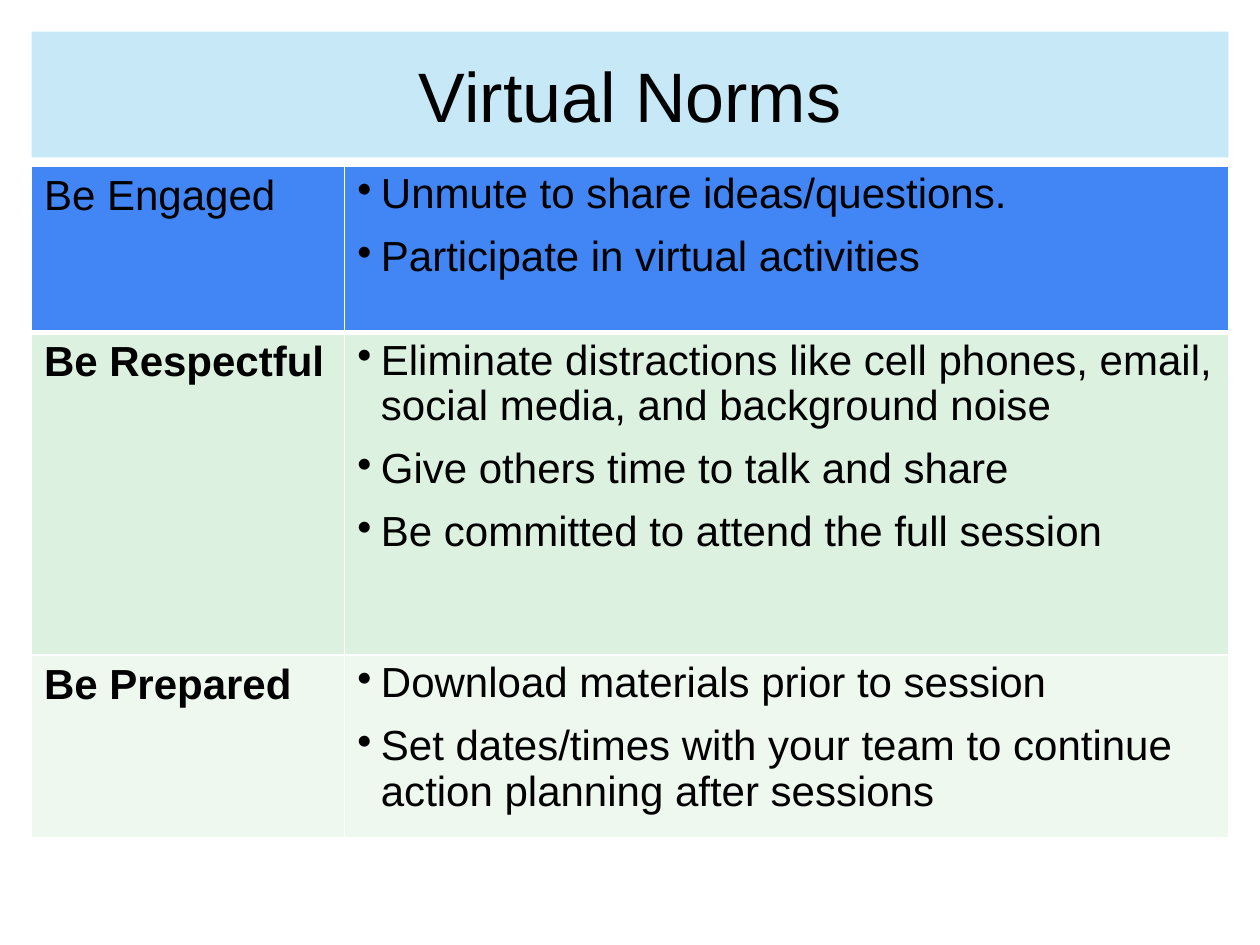
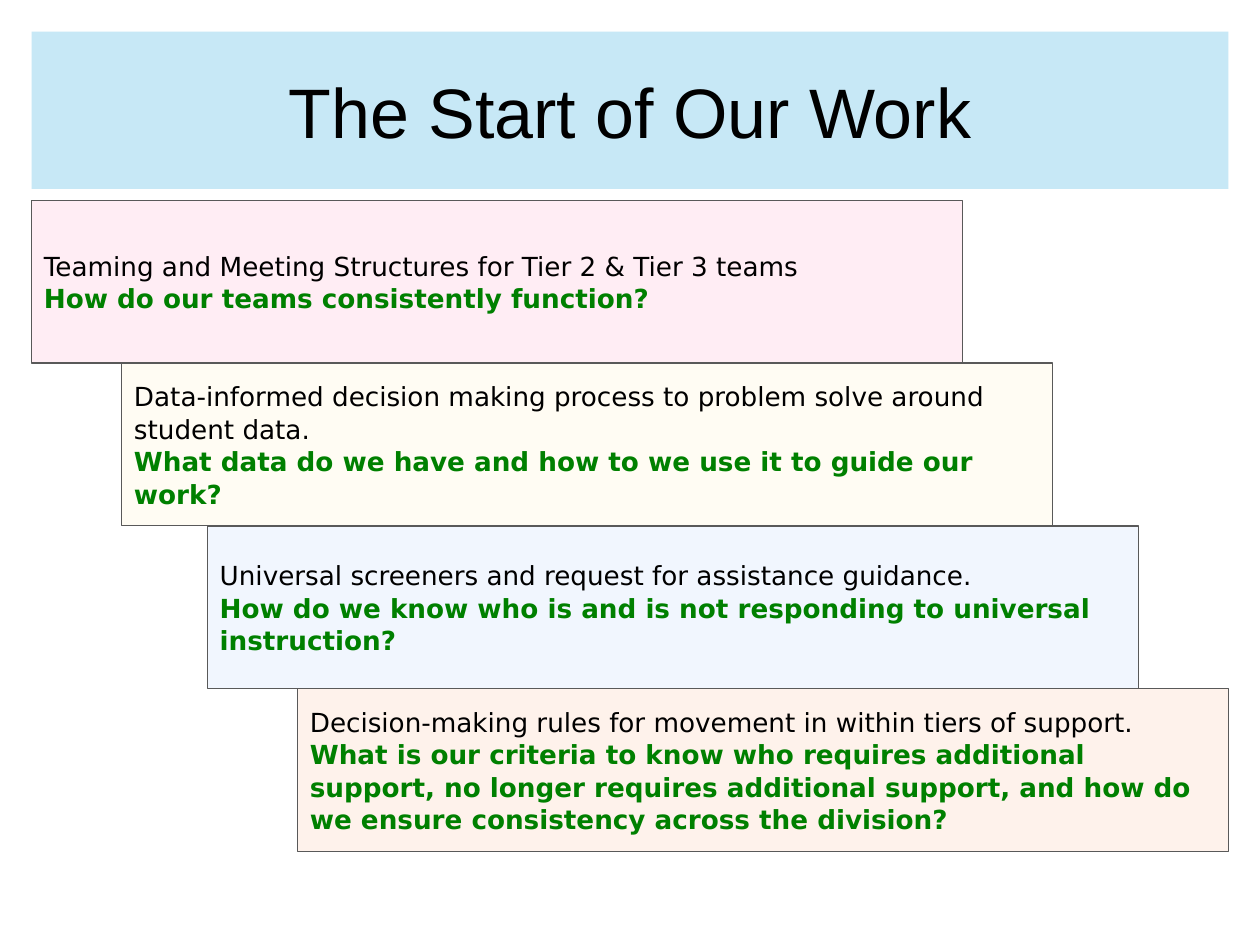
import pptx
import pptx.dml.color
import pptx.enum.shapes
import pptx.enum.text
import pptx.oxml
import pptx.oxml.ns
import pptx.util
from lxml import etree

Pt = pptx.util.Pt
TITLE_FONT, CARD_FONT = "Arial", "DejaVu Sans"
BLACK, WHITE, GREEN, GRAY, SKY = "000000", "FFFFFF", "008000", "595959", "A9DCF2"
MARGIN, CONTENT_WIDTH = 18, 684

NORMS_TITLE = "Virtual Norms"
NORMS = [
    ("Be Engaged", False, "4285F4", 95, [
        "Unmute to share ideas/questions.",
        "Participate in virtual activities",
    ]),
    ("Be Respectful", True, "DCF1DF", 184.3, [
        "Eliminate distractions like cell phones, email, social media, and background noise",
        "Give others time to talk and share",
        "Be committed to attend the full session",
    ]),
    ("Be Prepared", True, "EEF8EF", 104.4, [
        "Download materials prior to session",
        "Set dates/times with your team to continue action planning after sessions",
    ]),
]
NORM_COLUMNS = (179, 505)

WORK_TITLE = "The Start of Our Work"
WORK_STEPS = [
    (18, "FF006F", 7, "Teaming and Meeting Structures for Tier 2 & Tier 3 teams",
     "How do our teams consistently function?"),
    (69.5, "FFD966", 8,
     "Data-informed decision making process to problem solve around student data.",
     "What data do we have and how to we use it to guide our work?"),
    (118.5, "4285F4", 7, "Universal screeners and request for assistance guidance.",
     "How do we know who is and is not responding to universal instruction?"),
    (170, "F66504", 8, "Decision-making rules for movement in within tiers of support.",
     "What is our criteria to know who requires additional support, no longer requires "
     "additional support, and how do we ensure consistency across the division?"),
]
STEP_TOP, STEP_WIDTH, STEP_HEIGHT = 114.5, 532, 93


def color(value):
    return pptx.dml.color.RGBColor.from_string(value)


def paint(target, value, opacity=100):
    target.fill.solid()
    target.fill.fore_color.rgb = color(value)
    if opacity < 100:
        for srgb in target._element.spPr.iterfind(pptx.oxml.ns.qn("a:solidFill") + "/*"):
            etree.SubElement(srgb, pptx.oxml.ns.qn("a:alpha"), val=str(opacity * 1000))


def style(paragraph, font, size, value=BLACK, bold=False):
    paragraph.font.name = font
    paragraph.font.size = Pt(size)
    paragraph.font.bold = bold
    paragraph.font.color.rgb = color(value)


def write(frame, lines):
    frame.text = "\n".join(lines)
    return frame.paragraphs


def add_titled_slide(deck, title, height):
    slide = deck.slides.add_slide(deck.slide_layouts[5])
    band = slide.shapes.title
    band.left, band.top = Pt(MARGIN), Pt(MARGIN)
    band.width, band.height = Pt(CONTENT_WIDTH), Pt(height)
    paint(band, SKY, 65)
    frame = band.text_frame
    frame.auto_size = pptx.enum.text.MSO_AUTO_SIZE.NONE
    frame.vertical_anchor = pptx.enum.text.MSO_ANCHOR.MIDDLE
    heading = write(frame, [title])[0]
    heading.alignment = pptx.enum.text.PP_ALIGN.CENTER
    style(heading, TITLE_FONT, 40)
    return slide


def border(cell, side, width):
    cell._tc.get_or_add_tcPr().append(pptx.oxml.parse_xml(
        f'<a:ln{side} {pptx.oxml.ns.nsdecls("a")} w="{Pt(width)}"><a:solidFill>'
        f'<a:srgbClr val="{WHITE}"/></a:solidFill></a:ln{side}>'))


def bullet(paragraph):
    properties = paragraph._p.get_or_add_pPr()
    properties.set("marL", str(Pt(13.5)))
    properties.set("indent", str(Pt(-13.5)))
    etree.SubElement(properties, pptx.oxml.ns.qn("a:buChar"), char="•")


def add_norms(slide):
    heights = [norm[3] for norm in NORMS]
    table = slide.shapes.add_table(
        len(NORMS), len(NORM_COLUMNS), Pt(MARGIN), Pt(95),
        Pt(CONTENT_WIDTH), Pt(sum(heights))).table
    table.first_row = table.horz_banding = False
    for column, width in zip(table.columns, NORM_COLUMNS):
        column.width = Pt(width)
    for index, (norm, bold, tint, height, actions) in enumerate(NORMS):
        table.rows[index].height = Pt(height)
        name_cell, action_cell = table.rows[index].cells
        for cell in (name_cell, action_cell):
            for side in "LRTB":
                heavy = (index, side) in ((0, "B"), (1, "T"))
                border(cell, side, 3 if heavy else 1)
            paint(cell, tint)
        style(write(name_cell.text_frame, [norm])[0], TITLE_FONT, 24, bold=bold)
        for position, action in enumerate(write(action_cell.text_frame, actions)):
            action.line_spacing = 0.97
            action.space_before = Pt(10 if position else 0)
            bullet(action)
            style(action, TITLE_FONT, 24)


def add_steps(slide):
    for index, (left, tint, opacity, topic, question) in enumerate(WORK_STEPS):
        card = slide.shapes.add_shape(
            pptx.enum.shapes.MSO_SHAPE.RECTANGLE, Pt(left),
            Pt(STEP_TOP + index * STEP_HEIGHT), Pt(STEP_WIDTH), Pt(STEP_HEIGHT))
        card.shadow.inherit = False
        paint(card, tint, opacity)
        card.line.color.rgb = color(GRAY)
        card.line.width = Pt(0.75)
        frame = card.text_frame
        frame.word_wrap = True
        frame.vertical_anchor = pptx.enum.text.MSO_ANCHOR.MIDDLE
        frame.margin_top = frame.margin_bottom = Pt(7.2)
        lines = write(frame, [topic, question])
        for line, value, bold in zip(lines, (BLACK, GREEN), (False, True)):
            line.alignment = pptx.enum.text.PP_ALIGN.LEFT
            line.line_spacing = 1.03
            style(line, CARD_FONT, 15, value, bold)


def main():
    deck = pptx.Presentation()
    deck.slide_width, deck.slide_height = Pt(720), Pt(540)
    add_norms(add_titled_slide(deck, NORMS_TITLE, 72))
    add_steps(add_titled_slide(deck, WORK_TITLE, 90))
    deck.save("out.pptx")


if __name__ == "__main__":
    main()
